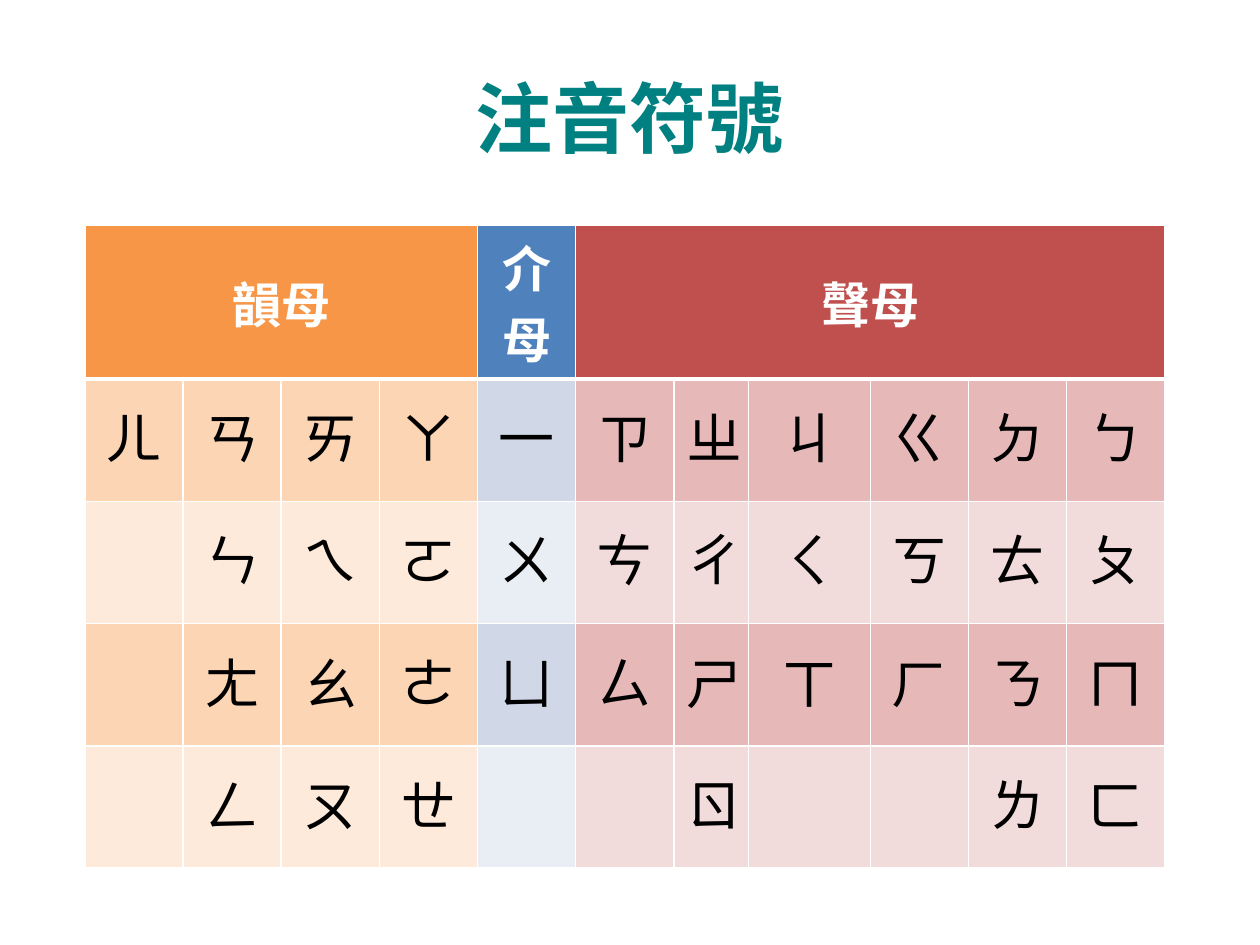
import pptx
import pptx.util
import pptx.enum.text
import pptx.dml.color
import pptx.oxml.ns
import lxml.etree

Pt = pptx.util.Pt
MID = pptx.enum.text.MSO_ANCHOR.MIDDLE
CENTER = pptx.enum.text.PP_ALIGN.CENTER
CJK = "Noto Sans CJK SC"

COLORS = {
    "teal": "008080", "white": "FFFFFF", "black": "000000",
    "orange": "F79646", "peach": "FCD5B5", "cream": "FDEADA",
    "blue": "4F81BD", "sky": "D0D8E8", "ice": "E9EDF4",
    "red": "C0504D", "rose": "E6B9B8", "blush": "F2DCDB",
}
TITLE = {"size": Pt(44), "bold": True, "name": CJK}
HEAD = {"size": Pt(28), "bold": True, "name": CJK}
SOUND = {"size": Pt(32), "bold": False, "name": "Arial"}

# name, column count, header fill, odd-row fill, even-row fill
GROUPS = [
    ("韻母", 4, "orange", "peach", "cream"),
    ("介母", 1, "blue", "sky", "ice"),
    ("聲母", 6, "red", "rose", "blush"),
]
# A dot marks an empty cell
SOUNDS = [
    "ㄦㄢㄞㄚ一ㄗㄓㄐㄍㄉㄅ",
    ".ㄣㄟㄛㄨㄘㄔㄑㄎㄊㄆ",
    ".ㄤㄠㄜㄩㄙㄕㄒㄏㄋㄇ",
    ".ㄥㄡㄝ..ㄖ..ㄌㄈ",
]
WIDTHS = [56.1] * 6 + [42.5, 69.8] + [56.1] * 3
HEIGHTS = [77.8] + [69.85] * 4


def rgb(key):
    return pptx.dml.color.RGBColor.from_string(COLORS[key])


class Deck:
    def __init__(self):
        self.prs = pptx.Presentation()
        self.prs.slide_width, self.prs.slide_height = Pt(720), Pt(540)
        self.slide = self.prs.slides.add_slide(self.prs.slide_layouts[5])

    def label(self, frame, text, style, color):
        para = frame.paragraphs[0]
        para.alignment = CENTER
        run = para.add_run()
        run.text = text
        for key, value in style.items():
            setattr(run.font, key, value)
        run.font.color.rgb = rgb(color)
        east = lxml.etree.SubElement(run._r.get_or_add_rPr(), pptx.oxml.ns.qn("a:ea"))
        east.set("typeface", style["name"])

    def title(self, text):
        box = self.slide.shapes.title
        box.left, box.top, box.width, box.height = Pt(36), Pt(21.6), Pt(648), Pt(90)
        box.text_frame.vertical_anchor = MID
        self.label(box.text_frame, text, TITLE, "teal")

    def edges(self, cell, top, bottom):
        """Draw the white cell borders; call before the fill is set."""
        props = cell._tc.get_or_add_tcPr()
        for side, width in zip("LRTB", (1, 1, top, bottom)):
            line = lxml.etree.SubElement(props, pptx.oxml.ns.qn("a:ln" + side))
            line.set("w", str(Pt(width)))
            fill = lxml.etree.SubElement(line, pptx.oxml.ns.qn("a:solidFill"))
            tint = lxml.etree.SubElement(fill, pptx.oxml.ns.qn("a:srgbClr"))
            tint.set("val", COLORS["white"])

    def table(self, left, top):
        grid = self.slide.shapes.add_table(
            len(HEIGHTS), len(WIDTHS), Pt(left), Pt(top),
            Pt(sum(WIDTHS)), Pt(sum(HEIGHTS))).table
        grid.first_row = grid.horz_banding = False
        for col, width in zip(grid.columns, WIDTHS):
            col.width = Pt(width)
        for row, height in zip(grid.rows, HEIGHTS):
            row.height = Pt(height)

        start = 0
        for name, count, head, odd, even in GROUPS:
            for col in range(start, start + count):
                for row in range(len(HEIGHTS)):
                    cell = grid.cell(row, col)
                    self.edges(cell, 3 if row == 1 else 1, 3 if row == 0 else 1)
                    cell.fill.solid()
                    cell.fill.fore_color.rgb = rgb(
                        head if row == 0 else odd if row % 2 else even)
                    cell.vertical_anchor = MID
                    sound = SOUNDS[row - 1][col] if row else "."
                    if sound != ".":
                        self.label(cell.text_frame, sound, SOUND, "black")
            first = grid.cell(0, start)
            if count > 1:
                first.merge(grid.cell(0, start + count - 1))
            self.label(first.text_frame, name, HEAD, "white")
            start += count


def main():
    deck = Deck()
    deck.title("注音符號")
    deck.table(48.5, 128.5)
    deck.prs.save("out.pptx")


if __name__ == "__main__":
    main()
